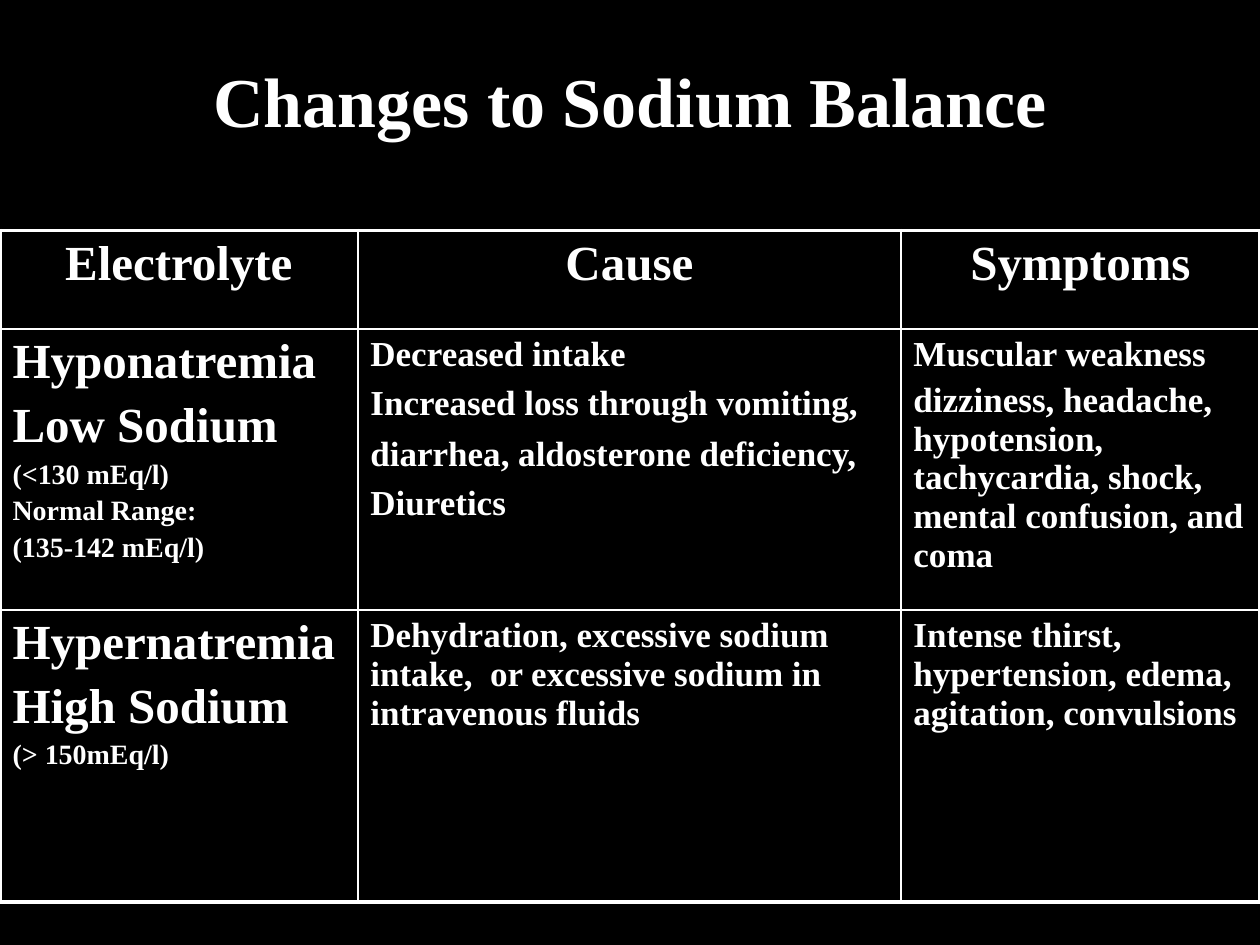
from dataclasses import dataclass

from lxml import etree
from pptx import Presentation
from pptx.dml.color import RGBColor
from pptx.enum import text
from pptx.oxml import ns
from pptx.util import Inches, Pt


@dataclass(frozen=True)
class Theme:
    font: str = "Times New Roman"
    ink: RGBColor = RGBColor(0xFF, 0xFF, 0xFF)
    ground: RGBColor = RGBColor(0, 0, 0)
    title: int = 40
    heading: int = 28
    body: int = 20
    note: int = 16
    outer_line: float = 2.25
    inner_line: float = 1


THEME = Theme()
COLUMN_WIDTHS = (2.84, 4.31, 2.85)
ROW_HEIGHTS = (0.78, 2.23, 2.32)


def lines(size, *wording):
    return [[(line, size)] for line in wording]


# Each cell is a list of paragraphs, each paragraph a list of (wording, size).
ROWS = [
    [lines(THEME.heading, name) for name in ("Electrolyte", "Cause", "Symptoms")],
    [
        lines(THEME.heading, "Hyponatremia", "Low Sodium")
        + lines(THEME.note, "(<130 mEq/l)", "Normal Range:", "(135-142 mEq/l)"),
        [
            [("Decreased intake", THEME.body)],
            [("Increased loss through vomiting, diarrhea, aldosterone deficiency,", THEME.body),
             (" ", THEME.heading)],
            [("Diuretics", THEME.body)],
        ],
        lines(THEME.body, "Muscular weakness",
              "dizziness, headache,  hypotension, tachycardia, shock, "
              "mental confusion, and coma"),
    ],
    [
        lines(THEME.heading, "Hypernatremia", "High Sodium")
        + lines(THEME.note, "(> 150mEq/l)"),
        lines(THEME.body, "Dehydration, excessive sodium intake,  "
                          "or excessive sodium in intravenous fluids"),
        lines(THEME.body, "Intense thirst, hypertension, edema, agitation, convulsions"),
    ],
]


def style_span(span, size):
    span.font.name = THEME.font
    span.font.size = Pt(size)
    span.font.bold = True
    span.font.color.rgb = THEME.ink


def add_title(page, wording):
    box = page.shapes.title
    box.left, box.top, box.width, box.height = map(Inches, (0.75, 0.33, 8.5, 0.92))
    frame = box.text_frame
    frame.text = wording
    frame.vertical_anchor = text.MSO_ANCHOR.MIDDLE
    para = frame.paragraphs[0]
    para.alignment = text.PP_ALIGN.CENTER
    style_span(para.runs[0], THEME.title)


def fill_cell(cell, paragraphs, alignment):
    for index, pieces in enumerate(paragraphs):
        frame = cell.text_frame
        para = frame.add_paragraph() if index else frame.paragraphs[0]
        para.alignment = alignment
        para.space_before = Pt(0.2 * max(size for _, size in pieces))
        for wording, size in pieces:
            span = para.add_run()
            span.text = wording
            style_span(span, size)


def set_borders(cell, outer_sides):
    """Draw all four sides, heavier where the side is on the table's edge."""
    properties = cell._tc.get_or_add_tcPr()
    for side in "LRTB":
        width = THEME.outer_line if side in outer_sides else THEME.inner_line
        line = etree.SubElement(properties, ns.qn(f"a:ln{side}"), w=str(Pt(width)))
        fill = etree.SubElement(line, ns.qn("a:solidFill"))
        etree.SubElement(fill, ns.qn("a:srgbClr"), val=str(THEME.ink))


def add_balance_table(page):
    row_count, column_count = len(ROWS), len(COLUMN_WIDTHS)
    table = page.shapes.add_table(
        row_count, column_count, Inches(0), Inches(1.83),
        Inches(sum(COLUMN_WIDTHS)), Inches(sum(ROW_HEIGHTS))).table
    table.first_row = table.horz_banding = False
    for column, width in zip(table.columns, COLUMN_WIDTHS):
        column.width = Inches(width)
    for row, height in zip(table.rows, ROW_HEIGHTS):
        row.height = Inches(height)

    for r, contents in enumerate(ROWS):
        alignment = text.PP_ALIGN.LEFT if r else text.PP_ALIGN.CENTER
        for c, paragraphs in enumerate(contents):
            cell = table.cell(r, c)
            fill_cell(cell, paragraphs, alignment)
            edges = {"T": r == 0, "B": r == row_count - 1,
                     "L": c == 0, "R": c == column_count - 1}
            set_borders(cell, [side for side, outer in edges.items() if outer])
            cell.fill.background()


def main():
    deck = Presentation()
    deck.slide_width, deck.slide_height = Inches(10), Inches(7.5)
    page = deck.slides.add_slide(deck.slide_layouts[5])
    page.background.fill.solid()
    page.background.fill.fore_color.rgb = THEME.ground
    add_title(page, "Changes to Sodium Balance")
    add_balance_table(page)
    deck.save("out.pptx")


if __name__ == "__main__":
    main()
